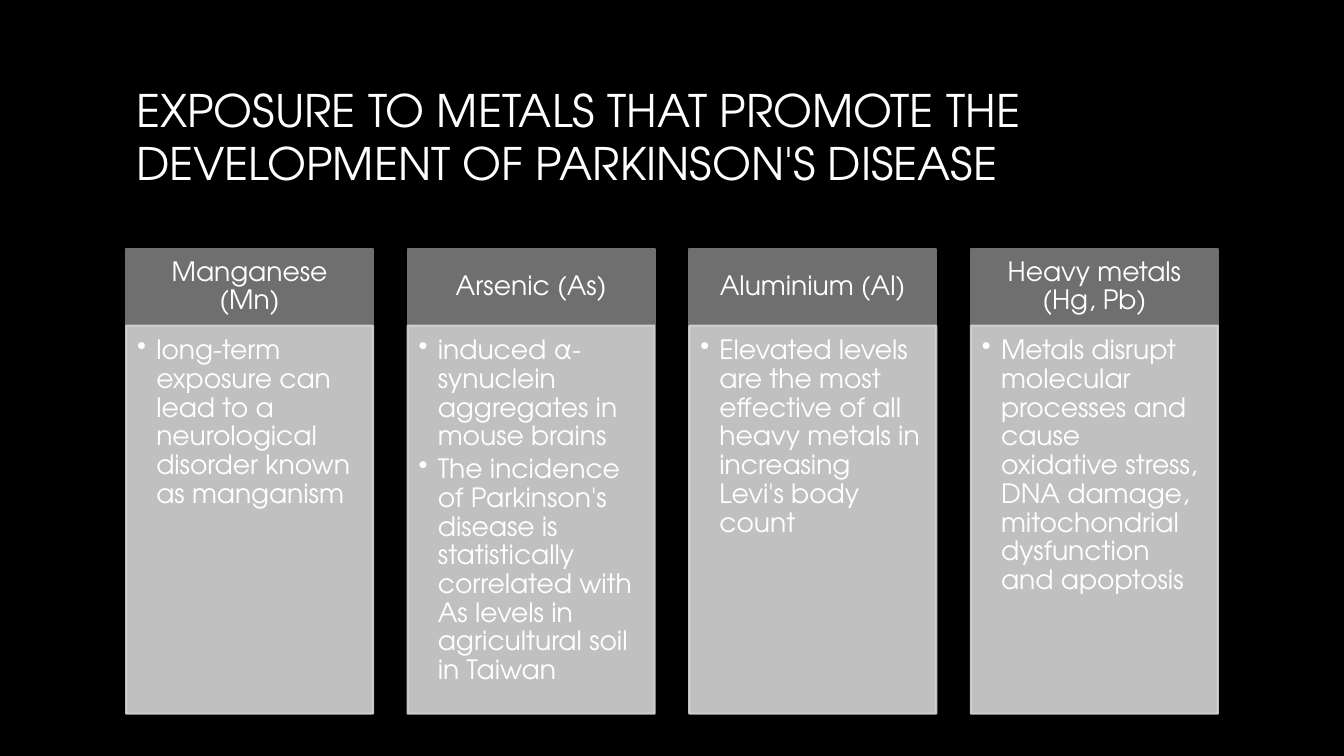
from dataclasses import dataclass

from lxml.etree import SubElement
from pptx import Presentation
from pptx.dml.color import RGBColor
from pptx.enum.shapes import MSO_SHAPE
from pptx.enum.text import MSO_ANCHOR, MSO_AUTO_SIZE, PP_ALIGN
from pptx.oxml.ns import qn
from pptx.util import Inches, Pt


@dataclass(frozen=True)
class Theme:
    back: RGBColor = RGBColor(0x00, 0x00, 0x00)
    text: RGBColor = RGBColor(0xFF, 0xFF, 0xFF)
    head: RGBColor = RGBColor(0x6F, 0x6F, 0x6F)
    body: RGBColor = RGBColor(0xD5, 0xD5, 0xD5)
    font: str = "TeX Gyre Adventor"
    title_size: Pt = Pt(32)
    text_size: Pt = Pt(19)
    line: Pt = Pt(1.5)


theme = Theme()

LEFT, STEP, WIDTH = 1.25, 2.793, 2.45
HEAD_TOP, HEAD_HIGH = 2.47, 0.75
BODY_TOP, BODY_HIGH = 3.23, 3.85
INDENT = Inches(0.19)

metals = [
    ("Manganese (Mn)", [
        "long-term exposure can lead to a neurological disorder known as manganism"]),
    ("Arsenic (As)", [
        "induced α-synuclein aggregates in mouse brains",
        "The incidence of Parkinson's disease is statistically correlated "
        "with As levels in agricultural soil in Taiwan"]),
    ("Aluminium (Al)", [
        "Elevated levels are the most effective of all heavy metals "
        "in increasing Levi's body count"]),
    ("Heavy metals (Hg, Pb)", [
        "Metals disrupt molecular processes and cause oxidative stress, "
        "DNA damage, mitochondrial dysfunction and apoptosis"]),
]

head_frame = {
    "vertical_anchor": MSO_ANCHOR.MIDDLE,
    "margin_left": Inches(0.15), "margin_top": Inches(0.08),
    "margin_right": Inches(0.15), "margin_bottom": Inches(0.08),
}
body_frame = {
    "vertical_anchor": MSO_ANCHOR.TOP,
    "margin_left": Inches(0.11), "margin_top": Inches(0.11),
    "margin_right": Inches(0.15), "margin_bottom": Inches(0.17),
}
head_para = {"alignment": PP_ALIGN.CENTER, "line_spacing": 0.9}
body_para = {"alignment": PP_ALIGN.LEFT, "line_spacing": 0.9,
             "space_after": Pt(2.85), "level": 1}


def style(item, values):
    """Set each attribute of item that values names."""
    for name, value in values.items():
        setattr(item, name, value)


def add_box(slide, place, color, lines, frame_look, para_look):
    """Add a filled rectangle with one paragraph for each line of text."""
    box = slide.shapes.add_shape(MSO_SHAPE.RECTANGLE, *map(Inches, place))
    box.shadow.inherit = False
    box.fill.solid()
    box.fill.fore_color.rgb = color
    box.line.color.rgb = color
    box.line.width = theme.line
    frame = box.text_frame
    frame.word_wrap = True
    style(frame, frame_look)
    for index, line in enumerate(lines):
        para = frame.add_paragraph() if index else frame.paragraphs[0]
        style(para, para_look)
        run = para.add_run()
        run.text = line
        style(run.font, {"name": theme.font, "size": theme.text_size})
        run.font.color.rgb = theme.text
    return box


deck = Presentation()
style(deck, {"slide_width": Inches(13.33), "slide_height": Inches(7.5)})
slide = deck.slides.add_slide(deck.slide_layouts[5])
slide.background.fill.solid()
slide.background.fill.fore_color.rgb = theme.back

title = slide.shapes.title
style(title, {"left": Inches(LEFT), "top": Inches(0.31),
              "width": Inches(10.83), "height": Inches(2.08)})
title.text = "EXPOSURE TO METALS THAT PROMOTE THE DEVELOPMENT OF PARKINSON'S DISEASE"
style(title.text_frame, {"word_wrap": True, "auto_size": MSO_AUTO_SIZE.NONE,
                         "vertical_anchor": MSO_ANCHOR.MIDDLE})
para = title.text_frame.paragraphs[0]
para.alignment = PP_ALIGN.LEFT
font = para.runs[0].font
style(font, {"name": theme.font, "size": theme.title_size})
font.color.rgb = theme.text

for column, (metal, effects) in enumerate(metals):
    left = LEFT + column * STEP
    add_box(slide, (left, HEAD_TOP, WIDTH, HEAD_HIGH), theme.head,
            [metal], head_frame, head_para)
    body = add_box(slide, (left, BODY_TOP, WIDTH, BODY_HIGH), theme.body,
                   effects, body_frame, body_para)
    for color in body.element.spPr.iter(qn("a:srgbClr")):
        SubElement(color, qn("a:alpha"), val="90000")
    for para in body.text_frame.paragraphs:
        props = para._p.get_or_add_pPr()
        props.set("marL", str(INDENT))
        props.set("indent", str(-INDENT))
        SubElement(props, qn("a:buChar"), char="•")

deck.save("out.pptx")
